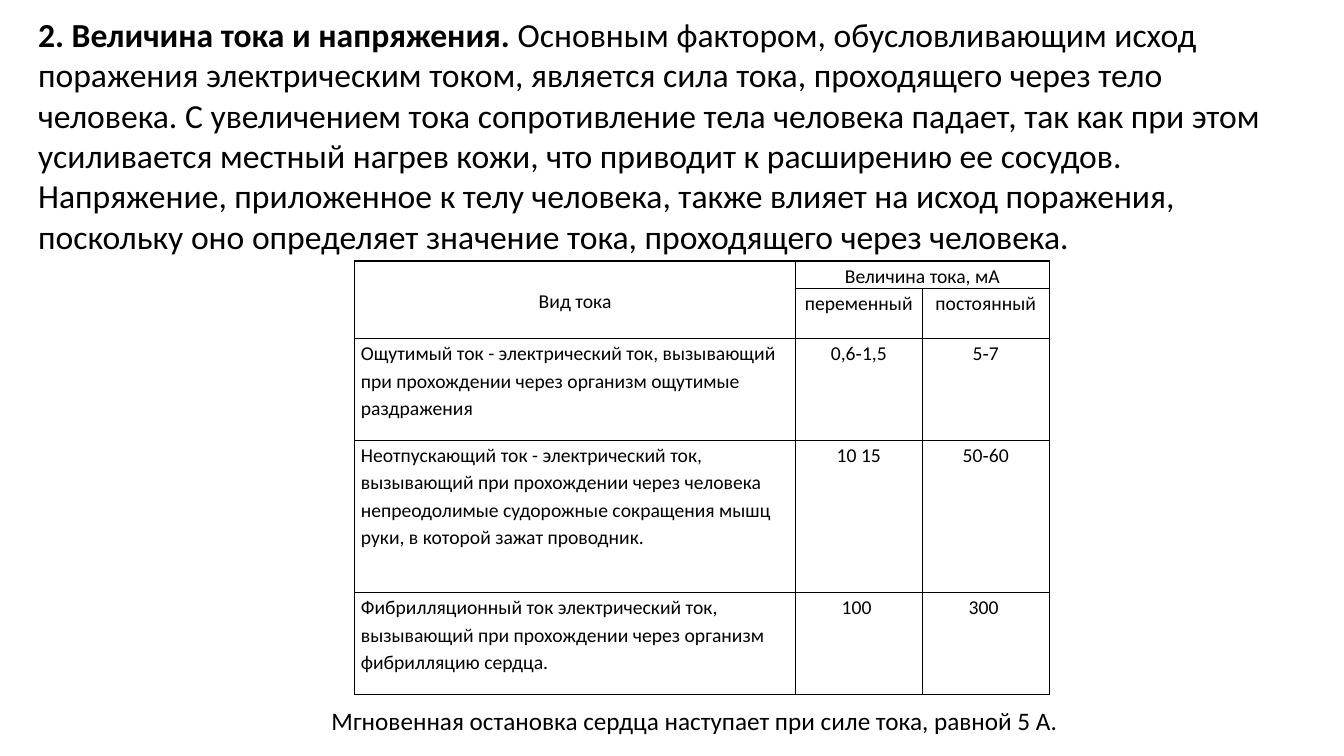
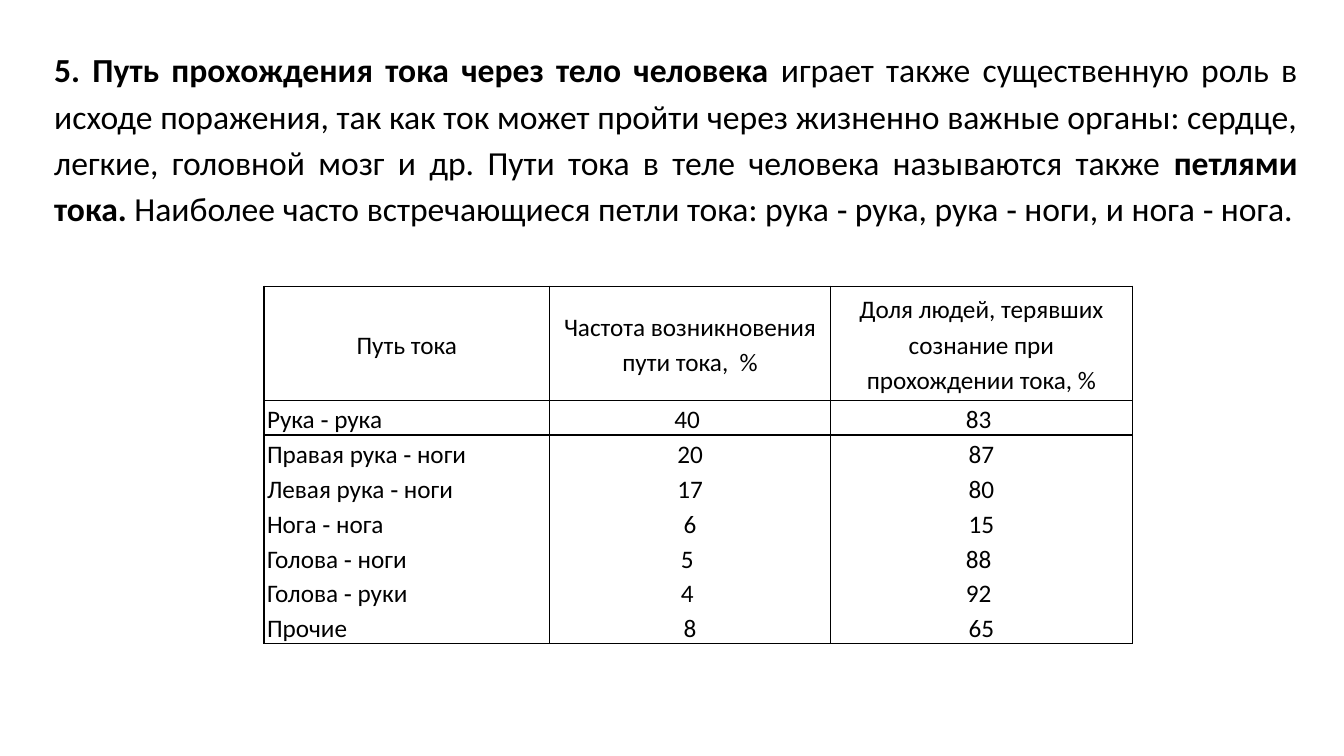
from dataclasses import dataclass
from typing import NamedTuple

from lxml.etree import SubElement
from pptx import Presentation
from pptx.dml.color import RGBColor
from pptx.enum.text import MSO_ANCHOR, MSO_AUTO_SIZE, PP_ALIGN
from pptx.oxml.ns import qn
from pptx.slide import Slide
from pptx.table import _Cell
from pptx.text.text import _Paragraph
from pptx.util import Emu, Inches, Pt

SLIDE_WIDTH, SLIDE_HEIGHT = Inches(13.33), Inches(7.5)


@dataclass(frozen=True)
class Theme:
    font: str = "Calibri"
    ink: str = "000000"
    body_size: int = 24
    note_size: int = 18
    small_size: int = 14
    loose_spacing: float = 1.15
    border_width: int = 1


THEME = Theme()


class Phrase(NamedTuple):
    text: str
    bold: bool = False


@dataclass(frozen=True)
class Passage:
    left: float
    top: float
    width: float
    height: float
    phrases: list[Phrase]
    size: int = THEME.body_size
    align: PP_ALIGN = PP_ALIGN.LEFT
    spacing: float = 1.0


@dataclass(frozen=True)
class Grid:
    left: float
    top: float
    columns: list[float]
    rows: list[float]
    texts: list[list[str]]
    size: int
    inset: float
    ruled_rows: int
    merges: tuple[tuple[int, int, int, int], ...] = ()


def across(percent: float) -> Emu:
    return Emu(round(SLIDE_WIDTH * percent / 100))


def down(percent: float) -> Emu:
    return Emu(round(SLIDE_HEIGHT * percent / 100))


def style_paragraph(paragraph: _Paragraph, size: int, align: PP_ALIGN, spacing: float) -> None:
    paragraph.alignment = align
    paragraph.line_spacing = spacing
    paragraph.font.name = THEME.font
    paragraph.font.size = Pt(size)
    paragraph.font.color.rgb = RGBColor.from_string(THEME.ink)


def add_passage(slide: Slide, passage: Passage) -> None:
    frame = slide.shapes.add_textbox(
        across(passage.left), down(passage.top), across(passage.width), down(passage.height)
    ).text_frame
    frame.word_wrap = True
    frame.auto_size = MSO_AUTO_SIZE.SHAPE_TO_FIT_TEXT
    paragraph = frame.paragraphs[0]
    style_paragraph(paragraph, passage.size, passage.align, passage.spacing)
    for phrase in passage.phrases:
        run = paragraph.add_run()
        run.text = phrase.text
        run.font.bold = phrase.bold


def set_borders(cell: _Cell, visible_sides: str) -> None:
    properties = cell._tc.get_or_add_tcPr()
    for position, side in enumerate("LRTB"):
        line = SubElement(properties, qn(f"a:ln{side}"), w=str(Pt(THEME.border_width)))
        if side in visible_sides:
            SubElement(SubElement(line, qn("a:solidFill")), qn("a:srgbClr"), val=THEME.ink)
        else:
            SubElement(line, qn("a:noFill"))
        properties.insert(position, line)


def add_grid(slide: Slide, grid: Grid) -> None:
    table = slide.shapes.add_table(
        len(grid.rows), len(grid.columns), across(grid.left), down(grid.top),
        across(sum(grid.columns)), down(sum(grid.rows)),
    ).table
    table.first_row = table.horz_banding = False
    for column, width in zip(table.columns, grid.columns):
        column.width = across(width)
    for row, height in zip(table.rows, grid.rows):
        row.height = down(height)
    for first_row, first_column, last_row, last_column in grid.merges:
        table.cell(first_row, first_column).merge(table.cell(last_row, last_column))

    last = len(grid.rows) - 1
    for row, texts in enumerate(grid.texts):
        for column, text in enumerate(texts):
            cell = table.cell(row, column)
            cell.text = text
            cell.margin_left = cell.margin_right = across(grid.inset)
            cell.margin_top = cell.margin_bottom = 0
            is_heading = row == 0
            cell.vertical_anchor = MSO_ANCHOR.MIDDLE if is_heading else MSO_ANCHOR.TOP
            align = PP_ALIGN.CENTER if is_heading or column else PP_ALIGN.LEFT
            style_paragraph(cell.text_frame.paragraphs[0], grid.size, align, THEME.loose_spacing)
            cell.fill.background()
            top = "T" if row <= grid.ruled_rows else ""
            bottom = "B" if row < grid.ruled_rows or row == last else ""
            set_borders(cell, "LR" + top + bottom)


CURRENT_STRENGTH = [
    Passage(2.1, 1.2, 95.4, 39.07, [
        Phrase("2. Величина тока и напряжения. ", True),
        Phrase(
            "Основным фактором, обусловливающим исход поражения электрическим током, "
            "является сила тока, проходящего через тело человека. С увеличением тока "
            "сопротивление тела человека падает, так как при этом усиливается местный "
            "нагрев кожи, что приводит к расширению ее сосудов. Напряжение, приложенное "
            "к телу человека, также влияет на исход поражения, поскольку оно определяет "
            "значение тока, проходящего через человека."
        ),
    ]),
    Grid(
        26.4, 34.53, [32.78, 9.45, 9.45], [3.2, 6.67, 13.47, 20.13, 13.47],
        [
            ["Вид тока", "Величина тока, мА", ""],
            ["", "переменный", "постоянный"],
            ["Ощутимый ток - электрический ток, вызывающий при прохождении через "
             "организм ощутимые раздражения", "0,6‑1,5", "5‑7"],
            ["Неотпускающий ток - электрический ток, вызывающий при прохождении через "
             "человека непреодолимые судорожные сокращения мышц руки, в которой зажат "
             "проводник.", "10 15", "50‑60"],
            ["Фибрилляционный ток электрический ток, вызывающий при прохождении через "
             "организм фибрилляцию сердца.", "100 ", "300 "],
        ],
        THEME.small_size, inset=0.45, ruled_rows=5, merges=((0, 0, 1, 0), (0, 1, 0, 2)),
    ),
    Passage(23.93, 92.67, 57.83, 5.33, [
        Phrase("Мгновенная остановка сердца наступает при силе тока, равной 5 А."),
    ], THEME.note_size),
]

CURRENT_PATH = [
    Passage(3.3, 5.07, 93.98, 26.13, [
        Phrase("5. Путь прохождения тока через тело человека", True),
        Phrase(
            " играет также существенную роль в исходе поражения, так как ток может пройти "
            "через жизненно важные органы: сердце, легкие, головной мозг и др. Пути тока "
            "в теле человека называются также "
        ),
        Phrase("петлями тока.", True),
        Phrase(
            " Наиболее часто встречающиеся петли тока: рука ‑ рука, рука ‑ ноги, "
            "и нога ‑ нога."
        ),
    ], align=PP_ALIGN.JUSTIFY, spacing=THEME.loose_spacing),
    Grid(
        19.65, 37.87, [21.23, 20.93, 22.43], [15.07] + [4.53] * 7,
        [
            ["Путь тока", "Частота возникновения пути тока,  %",
             "Доля людей, терявших сознание при прохождении тока, %"],
            ["Рука ‑ рука", "40 ", "83 "],
            ["Правая рука ‑ ноги", "20", "87"],
            ["Левая рука ‑ ноги", "17", "80"],
            ["Нога ‑ нога", "6", "15"],
            ["Голова ‑ ноги", "5 ", "88 "],
            ["Голова ‑ руки", "4 ", "92 "],
            ["Прочие", "8", "65"],
        ],
        THEME.note_size, inset=0.22, ruled_rows=2,
    ),
]


def main() -> None:
    deck = Presentation()
    deck.slide_width, deck.slide_height = SLIDE_WIDTH, SLIDE_HEIGHT
    for content in (CURRENT_STRENGTH, CURRENT_PATH):
        slide = deck.slides.add_slide(deck.slide_layouts[6])
        for part in content:
            if isinstance(part, Grid):
                add_grid(slide, part)
            else:
                add_passage(slide, part)
    deck.save("out.pptx")


if __name__ == "__main__":
    main()
